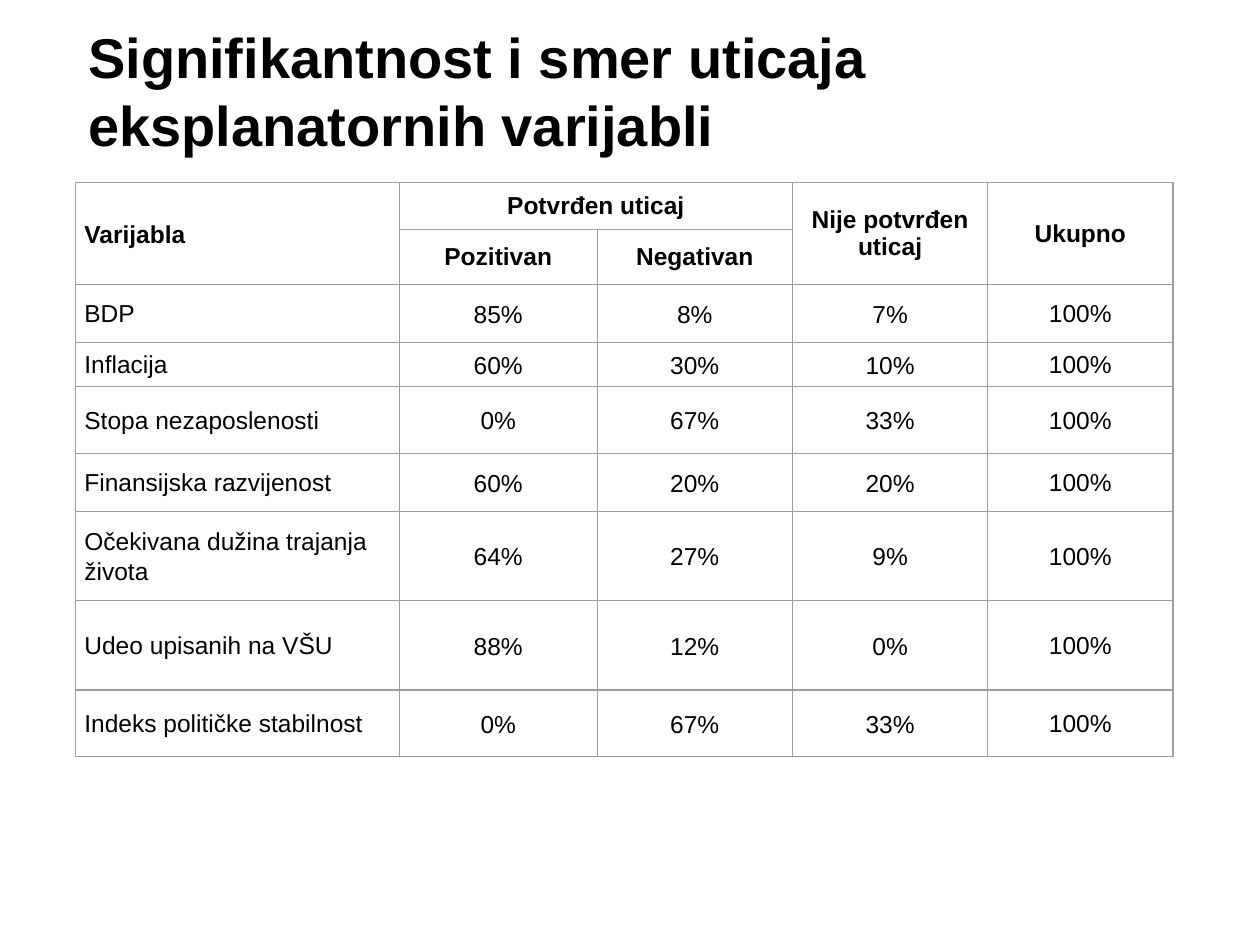
from lxml import etree
from pptx import Presentation
from pptx.dml.color import RGBColor
from pptx.enum.text import MSO_ANCHOR, PP_ALIGN
from pptx.oxml.ns import qn
from pptx.util import Inches, Pt

BLACK = RGBColor(0x00, 0x00, 0x00)
GRAY = RGBColor(0x9E, 0x9E, 0x9E)
LEFT, CENTER = PP_ALIGN.LEFT, PP_ALIGN.CENTER
MIDDLE = MSO_ANCHOR.MIDDLE
TITLE_ONLY = 5

COLUMN_WIDTHS = [2.57, 1.57, 1.55, 1.55, 1.47]
ROW_HEIGHTS = [0.37, 0.37, 0.46, 0.35, 0.53, 0.46, 0.71, 0.71, 0.53]
HEADER_ROWS = 2
ROWS = [
    ["Varijabla", "Potvrđen uticaj", "", "Nije potvrđen uticaj", "Ukupno"],
    ["", "Pozitivan", "Negativan", "", ""],
    ["BDP", "85%", "8%", "7%", "100%"],
    ["Inflacija", "60%", "30%", "10%", "100%"],
    ["Stopa nezaposlenosti", "0%", "67%", "33%", "100%"],
    ["Finansijska razvijenost", "60%", "20%", "20%", "100%"],
    ["Očekivana dužina trajanja života", "64%", "27%", "9%", "100%"],
    ["Udeo upisanih na VŠU", "88%", "12%", "0%", "100%"],
    ["Indeks političke stabilnost", "0%", "67%", "33%", "100%"],
]
MERGES = [((0, 0), (1, 0)), ((0, 1), (0, 2)), ((0, 3), (1, 3)), ((0, 4), (1, 4))]


def style_font(font, size, bold):
    font.name = "Arial"
    font.size = Pt(size)
    font.bold = bold
    font.color.rgb = BLACK


def add_borders(cell):
    properties = cell._tc.get_or_add_tcPr()
    for position, side in enumerate(("lnL", "lnR", "lnT", "lnB")):
        line = etree.Element(qn(f"a:{side}"), w=str(Pt(0.75)))
        fill = etree.SubElement(line, qn("a:solidFill"))
        etree.SubElement(fill, qn("a:srgbClr"), val=str(GRAY))
        properties.insert(position, line)


deck = Presentation()
deck.slide_width, deck.slide_height = Inches(10), Inches(7.5)
slide = deck.slides.add_slide(deck.slide_layouts[TITLE_ONLY])

title = slide.shapes.title
title.left, title.top = Inches(0.6), Inches(0.14)
title.width, title.height = Inches(8.48), Inches(1.15)
title.text_frame.text = "Signifikantnost i smer uticaja eksplanatornih varijabli"
title.text_frame.vertical_anchor = MIDDLE
title_para = title.text_frame.paragraphs[0]
title_para.alignment = LEFT
style_font(title_para.runs[0].font, 32, True)

table = slide.shapes.add_table(
    len(ROWS), len(COLUMN_WIDTHS), Inches(0.6), Inches(1.45),
    Inches(sum(COLUMN_WIDTHS)), Inches(sum(ROW_HEIGHTS)),
).table
table.first_row = table.horz_banding = False
for column, width in zip(table.columns, COLUMN_WIDTHS):
    column.width = Inches(width)
for row, height in zip(table.rows, ROW_HEIGHTS):
    row.height = Inches(height)

for row_index, texts in enumerate(ROWS):
    is_header = row_index < HEADER_ROWS
    for column_index, text in enumerate(texts):
        is_label = column_index == 0
        is_total = column_index == len(texts) - 1
        cell = table.cell(row_index, column_index)
        cell.fill.background()
        add_borders(cell)
        cell.vertical_anchor = MIDDLE
        if is_label or (is_total and not is_header):
            side_margin, top_margin = 0.07, 0
        elif is_header:
            side_margin, top_margin = 0, 0
        else:
            side_margin, top_margin = 0.01, 0.01
        cell.margin_left = cell.margin_right = Inches(side_margin)
        cell.margin_top, cell.margin_bottom = Inches(top_margin), 0
        cell.text_frame.text = text
        para = cell.text_frame.paragraphs[0]
        para.alignment = LEFT if is_label else CENTER
        if is_label or not is_header:
            para.line_spacing = 1.07
        style_font(para.font, 14, is_header)
        for span in para.runs:
            style_font(span.font, 14, is_header)

for first, last in MERGES:
    table.cell(*first).merge(table.cell(*last))

deck.save("out.pptx")
